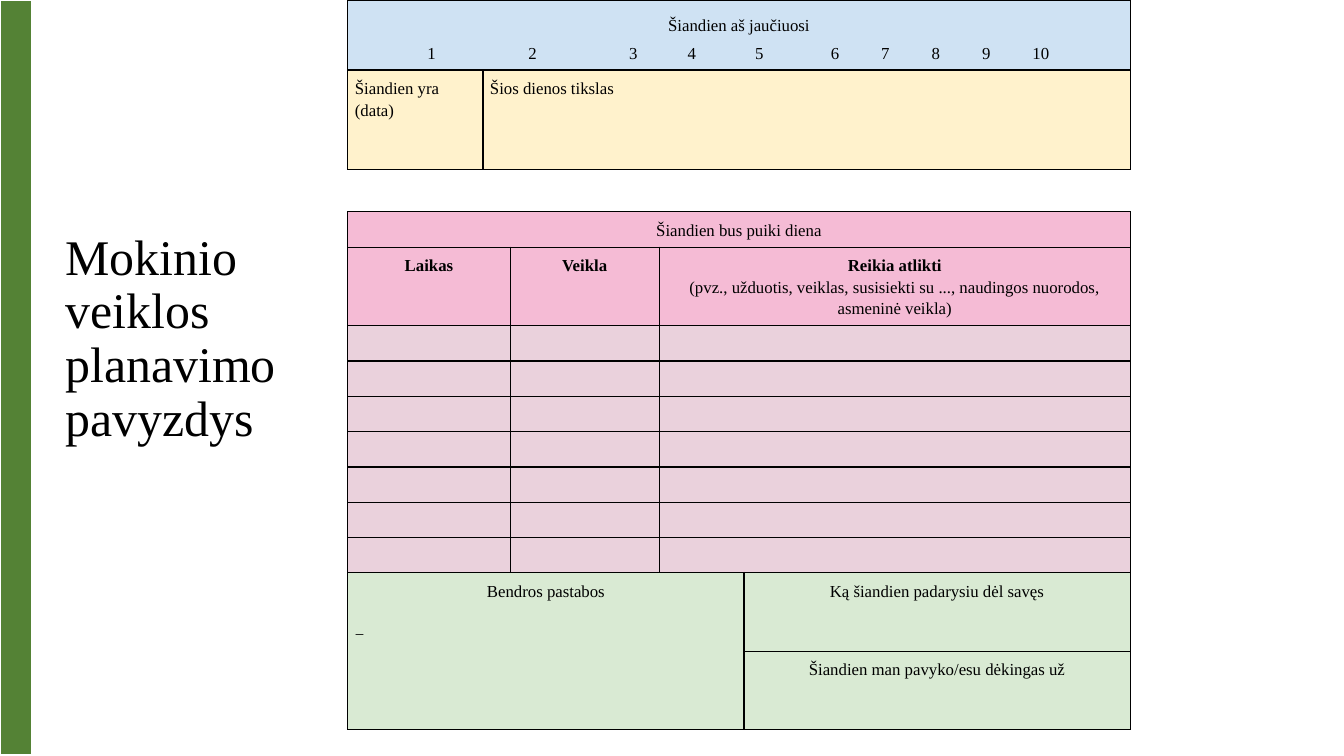
from lxml import etree
from pptx import Presentation
from pptx.dml.color import RGBColor
from pptx.enum.text import MSO_ANCHOR, MSO_AUTO_SIZE, PP_ALIGN
from pptx.oxml.ns import qn
from pptx.util import Inches, Pt

FONT = "Times New Roman"
BLACK = RGBColor(0x00, 0x00, 0x00)
WHITE = RGBColor(0xFF, 0xFF, 0xFF)
GREEN = RGBColor(0x54, 0x82, 0x35)
BLUE = RGBColor(0xCF, 0xE2, 0xF3)
CREAM = RGBColor(0xFF, 0xF2, 0xCC)
PINK = RGBColor(0xF5, 0xBB, 0xD5)
PALE_PINK = RGBColor(0xEA, 0xD1, 0xDC)
PALE_GREEN = RGBColor(0xD9, 0xEA, 0xD3)
LEFT, CENTER = PP_ALIGN.LEFT, PP_ALIGN.CENTER

# Content
TITLE = "Mokinio veiklos planavimo pavyzdys"
MOOD_STOPS = [0.72, 1.72, 2.72, 3.3, 3.97, 4.72, 5.22, 5.72, 6.22, 6.72]
MOOD_SCALE = "".join(f"\t{number}" for number in range(1, 11))
OPEN_NOTE = " "  # no-break space that carries the dash bullet
EMPTY_ROWS = 9

# Each table: place, column widths, row heights, row fills, merges (from, to),
# and texts as {(row, column): [(text, alignment, bold), ...]}
BAR = {
    "place": (0, 0),
    "columns": [0.31],
    "rows": [7.5],
    "fills": [GREEN],
    "merges": [],
    "texts": {},
    "border": (WHITE, 1, 3),
}
PLAN = {
    "place": (3.45, 2.1),
    "columns": [1.61, 1.48, 4.67],
    "rows": [0.35, 0.78] + [0.35] * EMPTY_ROWS,
    "fills": [PINK, PINK] + [PALE_PINK] * EMPTY_ROWS,
    "merges": [((0, 0), (0, 2))],
    "texts": {
        (0, 0): [("Šiandien bus puiki diena", CENTER, False)],
        (1, 0): [("Laikas", CENTER, True)],
        (1, 1): [("Veikla", CENTER, True)],
        (1, 2): [("Reikia atlikti", CENTER, True),
                 ("(pvz., užduotis, veiklas, susisiekti su ..., naudingos "
                  "nuorodos, asmeninė veikla)", CENTER, False)],
    },
    "border": (BLACK, 1, 1),
}
NOTES = {
    "place": (3.45, 5.68),
    "columns": [3.93, 3.83],
    "rows": [0.78, 0.78],
    "fills": [PALE_GREEN, PALE_GREEN],
    "merges": [((0, 0), (1, 0))],
    "texts": {
        (0, 0): [("Bendros pastabos", CENTER, False), (OPEN_NOTE, LEFT, False)],
        (0, 1): [("Ką šiandien padarysiu dėl savęs", CENTER, False)],
        (1, 1): [("Šiandien man pavyko/esu dėkingas už", CENTER, False)],
    },
    "border": (BLACK, 1, 1),
}
MOOD = {
    "place": (3.45, 0),
    "columns": [1.34, 6.42],
    "rows": [0.69, 0.99],
    "fills": [BLUE, CREAM],
    "merges": [((0, 0), (0, 1))],
    "texts": {
        (0, 0): [("Šiandien aš jaučiuosi", CENTER, False),
                 (MOOD_SCALE, LEFT, False)],
        (1, 0): [("Šiandien yra", LEFT, False), ("(data)", LEFT, False)],
        (1, 1): [("Šios dienos tikslas", LEFT, False)],
    },
    "border": (BLACK, 1, 1),
}


def add_borders(cell, color, width, bottom):
    properties = cell._tc.get_or_add_tcPr()
    for side in ("a:lnL", "a:lnR", "a:lnT", "a:lnB"):
        weight = bottom if side == "a:lnB" else width
        line = etree.SubElement(properties, qn(side), w=str(Pt(weight)))
        fill = etree.SubElement(line, qn("a:solidFill"))
        etree.SubElement(fill, qn("a:srgbClr"), val=str(color))


def add_tab_stops(para, stops):
    tabs = etree.SubElement(para._p.get_or_add_pPr(), qn("a:tabLst"))
    for stop in stops:
        etree.SubElement(tabs, qn("a:tab"), pos=str(Inches(stop)), algn="l")


def add_dash_bullet(para):
    properties = para._p.get_or_add_pPr()
    properties.set("marL", str(Inches(0.38)))
    properties.set("indent", str(-Inches(0.38)))
    etree.SubElement(properties, qn("a:buFont"), typeface=FONT)
    etree.SubElement(properties, qn("a:buChar"), char="−")


def write_cell(cell, lines, spacing):
    frame = cell.text_frame
    for index, (text, alignment, bold) in enumerate(lines):
        para = frame.add_paragraph() if index else frame.paragraphs[0]
        para.text = text
        para.alignment = alignment
        para.line_spacing = spacing
        if text == OPEN_NOTE:
            para.space_before = Pt(15.3)
            add_dash_bullet(para)
        if text == MOOD_SCALE:
            add_tab_stops(para, MOOD_STOPS)
        para.font.name = FONT
        para.font.size = Pt(12)
        para.font.bold = bold
        para.font.color.rgb = BLACK


def add_grid(page, grid, spacing=1.15):
    columns, rows = grid["columns"], grid["rows"]
    left, top = grid["place"]
    table = page.shapes.add_table(
        len(rows), len(columns), Inches(left), Inches(top),
        Inches(sum(columns)), Inches(sum(rows))).table
    table.first_row = table.horz_banding = False
    for column, width in zip(table.columns, columns):
        column.width = Inches(width)
    for row, height in zip(table.rows, rows):
        row.height = Inches(height)
    for row_index, fill in enumerate(grid["fills"]):
        for column_index in range(len(columns)):
            cell = table.cell(row_index, column_index)
            lines = grid["texts"].get((row_index, column_index), [])
            margin = Inches(0.07 if lines else 0.02)
            cell.margin_left = cell.margin_right = margin
            cell.margin_top = cell.margin_bottom = margin
            add_borders(cell, *grid["border"])
            cell.fill.solid()
            cell.fill.fore_color.rgb = fill
            has_scale = any(text == MOOD_SCALE for text, _, _ in lines)
            write_cell(cell, lines, 1.5 if has_scale else spacing)
    for first, last in grid["merges"]:
        table.cell(*first).merge(table.cell(*last))


def add_title(page):
    title = page.shapes.title
    title.left, title.top = Inches(0.55), Inches(3.09)
    title.width, title.height = Inches(3.1), Inches(0.56)
    frame = title.text_frame
    frame.text = TITLE
    frame.word_wrap = True
    frame.auto_size = MSO_AUTO_SIZE.NONE
    frame.vertical_anchor = MSO_ANCHOR.MIDDLE
    para = frame.paragraphs[0]
    para.alignment = LEFT
    para.line_spacing = 0.9
    para.font.name = FONT
    para.font.size = Pt(35.6)
    para.font.color.rgb = BLACK


def main():
    deck = Presentation()
    deck.slide_width, deck.slide_height = Inches(13.33), Inches(7.5)
    page = deck.slides.add_slide(deck.slide_layouts[5])
    add_title(page)
    # Side bar, then the planner tables from back to front
    for grid in (BAR, PLAN, NOTES, MOOD):
        add_grid(page, grid)
    deck.save("out.pptx")


if __name__ == "__main__":
    main()
